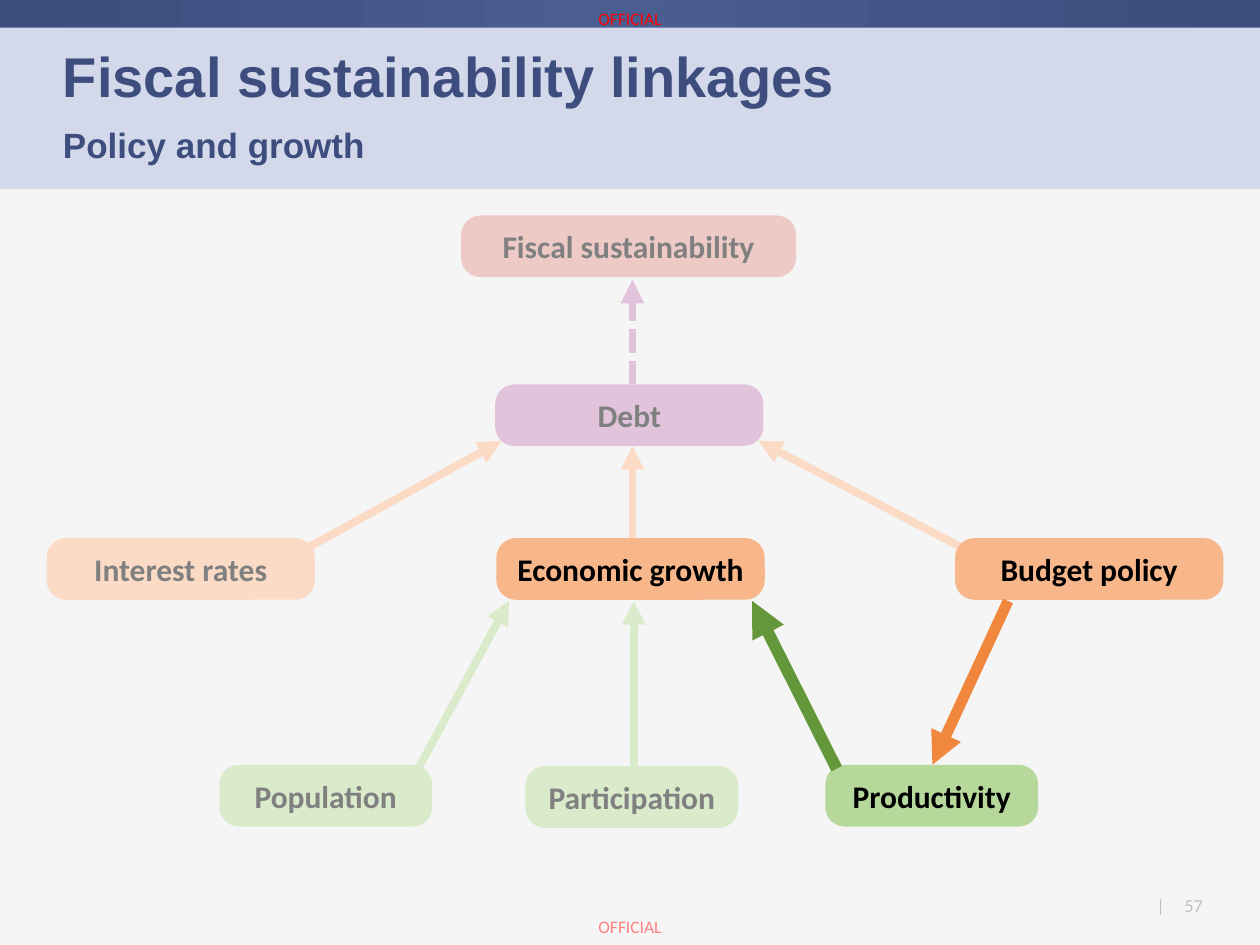
from copy import deepcopy
from dataclasses import dataclass
from typing import Optional

from pptx import Presentation
from pptx import util as u
from pptx.dml.color import RGBColor
from pptx.enum import dml, shapes, text
from pptx.oxml import ns, xmlchemy

PX = u.Inches(1) // 100  # 100 px to the inch


@dataclass(frozen=True)
class Theme:
    backdrop: str = "F2F2F2"
    body: str = "ECECEC"
    header: str = "D3D9EA"
    navy: str = "3D4D7D"
    navy_mid: str = "4A5E91"
    white: str = "FFFFFF"
    ink: str = "000000"
    grey: str = "808080"
    marking: str = "FF0000"
    purple: str = "C389B7"
    red: str = "DD958F"
    green: str = "B6D89A"
    orange: str = "F7B78B"
    strong_green: str = "64963A"
    strong_orange: str = "F1873D"
    heading_font: str = "Arial"
    body_font: str = "Calibri"
    title_size: float = 32
    subtitle_size: float = 20
    node_size: float = 18
    number_size: float = 10.5
    small_size: float = 10


THEME = Theme()


@dataclass(frozen=True)
class Area:
    left: int
    top: int
    width: int
    height: int

    def emu(self) -> tuple[int, ...]:
        return tuple(v * PX for v in (self.left, self.top, self.width, self.height))


@dataclass(frozen=True)
class Node:
    label: str
    left: int
    top: int
    width: int
    color: str


@dataclass(frozen=True)
class Arrow:
    start: tuple[int, int]
    end: tuple[int, int]
    color: str
    weight: float = 4.5
    dashed: bool = False


@dataclass(frozen=True)
class Note:
    label: str
    area: Area
    color: str
    size: float
    align: text.PP_ALIGN = text.PP_ALIGN.LEFT
    anchor: text.MSO_ANCHOR = text.MSO_ANCHOR.TOP
    wrap: bool = True


NODE_HEIGHT = 49
WIDE, NARROW = 213, 169
GROWTH_ROW, DRIVER_ROW = 427, 607

MUTED_NODES = [
    Node("Debt", 393, 305, WIDE, THEME.purple),
    Node("Fiscal sustainability", 366, 171, 266, THEME.red),
    Node("Population", 174, DRIVER_ROW, NARROW, THEME.green),
    Node("Participation", 417, DRIVER_ROW + 1, NARROW, THEME.green),
    Node("Interest rates", 37, GROWTH_ROW, WIDE, THEME.orange),
]
MUTED_ARROWS = [
    Arrow((242, 436), (398, 350), THEME.orange),
    Arrow((766, 436), (602, 350), THEME.orange),
    Arrow((502, 437), (502, 354), THEME.orange),
    Arrow((332, 610), (404, 477), THEME.green),
    Arrow((503, 612), (503, 477), THEME.green),
    Arrow((502, 305), (502, 222), THEME.purple, dashed=True),
]
ACTIVE_NODES = [
    Node("Productivity", 655, DRIVER_ROW, NARROW, THEME.green),
    Node("Budget policy", 758, GROWTH_ROW, WIDE, THEME.orange),
    Node("Economic growth", 394, GROWTH_ROW, WIDE, THEME.orange),
]
ACTIVE_ARROWS = [
    Arrow((800, 477), (740, 607), THEME.strong_orange, 6.25),
    Arrow((664, 610), (597, 477), THEME.strong_green, 6.75),
]
NOTES = [
    Note("57", Area(940, 710, 17, 18), THEME.grey, THEME.number_size, wrap=False),
    Note("|", Area(918, 710, 5, 17), THEME.grey, THEME.small_size, text.PP_ALIGN.RIGHT),
] + [
    Note("OFFICIAL", Area(460, top, 80, 29), THEME.marking, THEME.small_size,
         text.PP_ALIGN.CENTER, text.MSO_ANCHOR.MIDDLE)
    for top in (0, 721)
]


def rgb(color: str) -> RGBColor:
    return RGBColor.from_string(color)


def add_span(para, label: str, font: str, size: float, color: str, bold: bool = False) -> None:
    span = para.add_run()
    span.text = label
    span.font.name = font
    span.font.size = u.Pt(size)
    span.font.bold = bold
    span.font.color.rgb = rgb(color)


def add_panel(page, area: Area, color: str, kind=shapes.MSO_SHAPE.RECTANGLE):
    panel = page.shapes.add_shape(kind, *area.emu())
    panel.shadow.inherit = False
    panel.fill.solid()
    panel.fill.fore_color.rgb = rgb(color)
    panel.line.fill.background()
    return panel


def add_gradient_bar(page, area: Area) -> None:
    bar = add_panel(page, area, THEME.navy)
    bar.fill.gradient()
    stop_list = next(bar.fill._xPr.iter(ns.qn("a:gsLst")))
    stop_list.insert(1, deepcopy(stop_list[0]))
    colors = (THEME.navy, THEME.navy_mid, THEME.navy)
    for stop, position, color in zip(bar.fill.gradient_stops, (0, 0.52, 1), colors):
        stop.position = position
        stop.color.rgb = rgb(color)
    bar.fill.gradient_angle = 180


def add_veil(page, area: Area) -> None:
    """Half-transparent white sheet that mutes everything beneath it."""
    veil = add_panel(page, area, THEME.white)
    color = next(veil._element.spPr.iter(ns.qn("a:srgbClr")))
    color.append(color.makeelement(ns.qn("a:alpha"), {"val": "50000"}))


def add_text_box(page, area: Area, wrap: bool = True, vertical_inset: int = 0):
    frame = page.shapes.add_textbox(*area.emu()).text_frame
    frame.margin_left = frame.margin_right = 0
    frame.margin_top = frame.margin_bottom = vertical_inset * PX
    frame.word_wrap = wrap
    return frame


def add_note(page, note: Note) -> None:
    frame = add_text_box(page, note.area, note.wrap)
    frame.vertical_anchor = note.anchor
    para = frame.paragraphs[0]
    para.alignment = note.align
    add_span(para, note.label, THEME.body_font, note.size, note.color)


def add_heading(page, lines: list[tuple[str, float]]) -> None:
    frame = add_text_box(page, Area(50, 23, 900, 128), vertical_inset=5)
    for index, (label, size) in enumerate(lines):
        para = frame.add_paragraph() if index else frame.paragraphs[0]
        para.line_spacing = 1.1
        para.space_after = u.Pt(6)
        add_span(para, label, THEME.heading_font, size, THEME.navy, bold=True)


def add_node(page, node: Node) -> None:
    area = Area(node.left, node.top, node.width, NODE_HEIGHT)
    box = add_panel(page, area, node.color, shapes.MSO_SHAPE.ROUNDED_RECTANGLE)
    box.adjustments[0] = 0.315
    box.text_frame.word_wrap = True
    box.text_frame.vertical_anchor = text.MSO_ANCHOR.MIDDLE
    para = box.text_frame.paragraphs[0]
    para.alignment = text.PP_ALIGN.CENTER
    add_span(para, node.label, THEME.body_font, THEME.node_size, THEME.ink, bold=True)


def add_arrow(page, arrow: Arrow) -> None:
    ends = [v * PX for v in arrow.start + arrow.end]
    link = page.shapes.add_connector(shapes.MSO_CONNECTOR.STRAIGHT, *ends)
    link.line.color.rgb = rgb(arrow.color)
    link.line.width = u.Pt(arrow.weight)
    if arrow.dashed:
        link.line.dash_style = dml.MSO_LINE.SQUARE_DOT
    outline = link.line._get_or_add_ln()
    outline.append(outline.makeelement(ns.qn("a:tailEnd"), {"type": "triangle"}))
    properties = link._element.spPr
    properties.append(properties.makeelement(ns.qn("a:effectLst"), {}))


def add_diagram(page, nodes: list[Node], arrows: list[Arrow]) -> None:
    for node in nodes:
        add_node(page, node)
    for arrow in arrows:
        add_arrow(page, arrow)


def main() -> None:
    deck = Presentation()
    deck.slide_width, deck.slide_height = 1000 * PX, 750 * PX
    page = deck.slides.add_slide(deck.slide_layouts[6])
    page.background.fill.solid()
    page.background.fill.fore_color.rgb = rgb(THEME.backdrop)

    add_panel(page, Area(0, 23, 1000, 727), THEME.body)
    add_gradient_bar(page, Area(0, 0, 1000, 24))
    add_panel(page, Area(0, 22, 1000, 128), THEME.header)
    for note in NOTES:
        add_note(page, note)
    add_heading(page, [("Fiscal sustainability linkages", THEME.title_size),
                       ("Policy and growth", THEME.subtitle_size)])
    add_diagram(page, MUTED_NODES, MUTED_ARROWS)
    add_veil(page, Area(0, 151, 1000, 599))
    add_diagram(page, ACTIVE_NODES, ACTIVE_ARROWS)
    deck.save("out.pptx")


if __name__ == "__main__":
    main()
